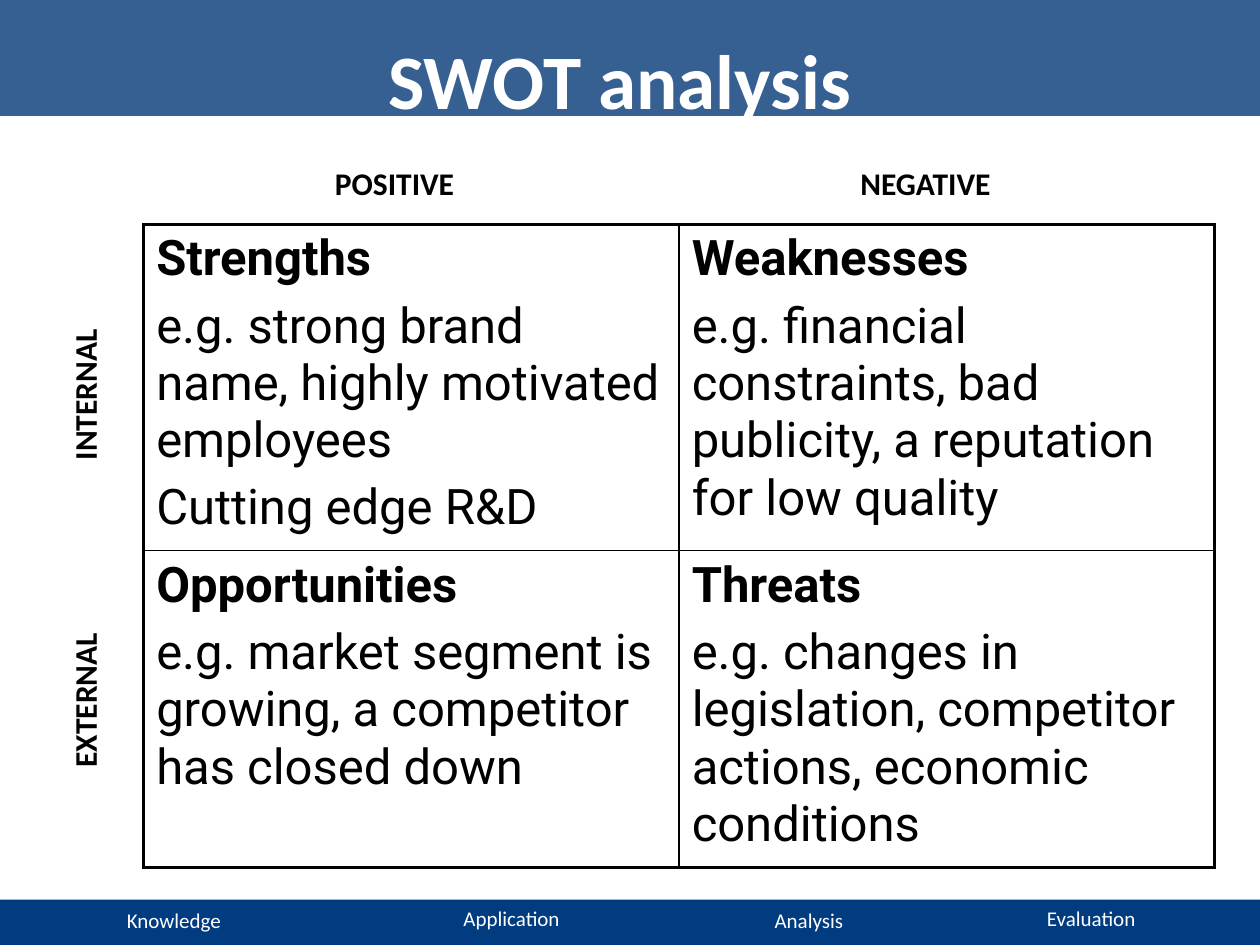
from pptx import Presentation
from pptx.dml.color import RGBColor
from pptx.enum.shapes import MSO_SHAPE
from pptx.enum.text import MSO_ANCHOR, PP_ALIGN
from pptx.oxml.ns import qn
from pptx.util import Inches, Pt
from lxml import etree

RECTANGLE = MSO_SHAPE.RECTANGLE
TOP = MSO_ANCHOR.TOP
LEFT, CENTER = PP_ALIGN.LEFT, PP_ALIGN.CENTER

THEME = {
    "band": "376092", "footer": "003C7F", "light": "FFFFFF", "dark": "000000",
    "heading_font": "Calibri", "table_font": "Roboto",
    "title_size": 44, "table_size": 28, "label_size": 18, "footer_size": 12,
    "outer_line": 2.25, "inner_line": 1, "paragraph_gap": 5.6,
}

WIDTH, HEIGHT = 10, 7.5
TABLE_LEFT, TABLE_TOP, COLUMN = 1.14, 1.78, 4.25
ROWS = [2.53, 2.45]
LABEL_WIDTH, LABEL_HEIGHT = 1.34, 0.4
FOOTER_WIDTH, FOOTER_HEIGHT = 2.68, 0.3


def write(frame, *lines, size, font=THEME["heading_font"], color=THEME["dark"],
          bold=False, bold_first=False, align=LEFT, gap=0):
    frame.word_wrap = True
    for index, line in enumerate(lines):
        para = frame.paragraphs[0] if index == 0 else frame.add_paragraph()
        para.alignment = align
        para.space_before = Pt(gap if index else 0)
        span = para.add_run()
        span.text = line
        span.font.name = font
        span.font.size = Pt(size)
        span.font.bold = bold or (bold_first and index == 0)
        span.font.color.rgb = RGBColor.from_string(color)


def border(cell, side, width):
    line = etree.SubElement(cell._tc.get_or_add_tcPr(), qn(f"a:ln{side}"), w=str(Pt(width)))
    fill = etree.SubElement(line, qn("a:solidFill"))
    etree.SubElement(fill, qn("a:srgbClr"), val=THEME["dark"])


deck = Presentation()
deck.slide_width, deck.slide_height = Inches(WIDTH), Inches(HEIGHT)
page = deck.slides.add_slide(deck.slide_layouts[5])

bands = [(0, 0.92, THEME["band"]), (7.14, 0.36, THEME["footer"])]
for top, height, color in bands:
    band = page.shapes.add_shape(RECTANGLE, 0, Inches(top), Inches(WIDTH), Inches(height))
    band.shadow.inherit = False
    band.fill.solid()
    band.fill.fore_color.rgb = RGBColor.from_string(color)
    band.line.fill.background()

title = page.shapes.title
title.left, title.top = Inches(0.67), Inches(0.21)
title.width, title.height = Inches(8.5), Inches(1.25)
title.text_frame.vertical_anchor = TOP
write(title.text_frame, "SWOT analysis", size=THEME["title_size"],
      color=THEME["light"], bold=True, align=CENTER)
page.shapes._spTree.append(title._element)

footers = [("Knowledge", 0.04, 7.15), ("Application", 2.72, 7.14),
           ("Analysis", 5.08, 7.15), ("Evaluation", 7.32, 7.14)]
for text, left, top in footers:
    box = page.shapes.add_textbox(Inches(left), Inches(top),
                                  Inches(FOOTER_WIDTH), Inches(FOOTER_HEIGHT))
    write(box.text_frame, text, size=THEME["footer_size"], color=THEME["light"], align=CENTER)

quadrants = [
    [("Strengths", "e.g. strong brand name, highly motivated employees", "Cutting edge R&D"),
     ("Weaknesses", "e.g. financial constraints, bad publicity, a reputation for low quality")],
    [("Opportunities", "e.g. market segment is growing, a competitor has closed down"),
     ("Threats", "e.g. changes in legislation, competitor actions, economic conditions")],
]
table = page.shapes.add_table(2, 2, Inches(TABLE_LEFT), Inches(TABLE_TOP),
                              Inches(2 * COLUMN), Inches(sum(ROWS))).table
table.first_row = table.horz_banding = False
for row, height in enumerate(ROWS):
    table.rows[row].height = Inches(height)
    for column, lines in enumerate(quadrants[row]):
        cell = table.cell(row, column)
        write(cell.text_frame, *lines, size=THEME["table_size"], font=THEME["table_font"],
              bold_first=True, gap=THEME["paragraph_gap"])
        edges = {"L": column == 0, "R": column == 1, "T": row == 0, "B": row == 1}
        for side, outer in edges.items():
            border(cell, side, THEME["outer_line"] if outer else THEME["inner_line"])
        cell.fill.background()

labels = [("INTERNAL", 0, 2.88, 270), ("EXTERNAL", 0, 5.32, 270),
          ("POSITIVE", 2.56, 1.25, 0), ("NEGATIVE", 6.73, 1.25, 0)]
for text, left, top, rotation in labels:
    box = page.shapes.add_textbox(Inches(left), Inches(top),
                                  Inches(LABEL_WIDTH), Inches(LABEL_HEIGHT))
    box.rotation = rotation
    write(box.text_frame, text, size=THEME["label_size"], bold=True)

deck.save("out.pptx")
